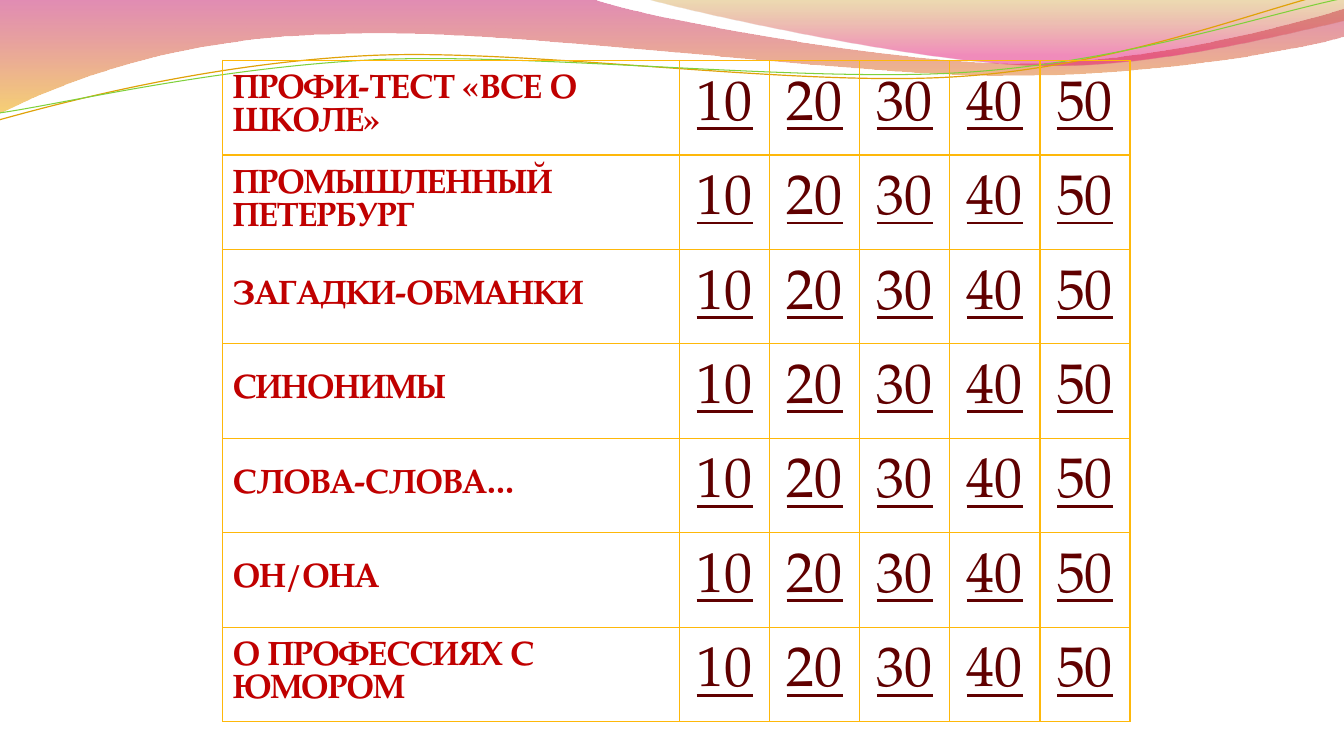
import math

from lxml import etree
from pptx import Presentation
from pptx import util as u
from pptx.dml.color import RGBColor
from pptx.enum import text
from pptx.oxml import ns

TOPICS = ["ПРОФИ-ТЕСТ «ВСЕ О ШКОЛЕ»", "ПРОМЫШЛЕННЫЙ ПЕТЕРБУРГ", "ЗАГАДКИ-ОБМАНКИ",
          "СИНОНИМЫ", "СЛОВА-СЛОВА…", "ОН/ОНА", "О ПРОФЕССИЯХ С ЮМОРОМ"]
POINTS = ["10", "20", "30", "40", "50"]

# Each wave: a start point, then line ends (2 numbers) and cubic curves (6 numbers).
LEFT_WAVE = [(0, 0), (5.87, -0.01), (6.34, 0.17, 8.85, 0.63, 10.11, 0.63),
             (11.38, 0.63, 12.78, 0.26, 13.33, 0.09), (13.35, 0.36),
             (13.11, 0.44, 11.6, 0.76, 9.94, 0.75), (8.29, 0.75, 5.09, 0.28, 3.43, 0.34),
             (1.72, 0.36, 0.61, 0.83, -0.01, 1.13), (0, 0)]
RIGHT_WAVE = [(6.39, -0.01), (6.79, 0.11, 9.09, 0.62, 10.25, 0.65),
              (11.41, 0.69, 12.82, 0.32, 13.33, 0.21), (13.33, 0), (6.39, -0.01)]
ORANGE_LINE = [(-0.01, 1.19), (0.64, 1.01, 2.11, 0.62, 3.69, 0.55),
               (5.27, 0.48, 7.9, 0.87, 9.5, 0.76), (11.1, 0.66, 12.52, 0.08, 13.31, -0.1)]
GREEN_LINE = [(0, 1.12), (0.63, 1.03, 2.18, 0.66, 3.78, 0.59),
              (5.37, 0.53, 7.96, 0.82, 9.55, 0.72), (11.15, 0.62, 12.55, 0.14, 13.34, -0.02)]


def color(hex_value):
    return RGBColor.from_string(hex_value)


def add_line_xml(parent, tag, hex_value, points):
    line = etree.SubElement(parent, ns.qn(tag), w=str(u.Pt(points)))
    fill = etree.SubElement(line, ns.qn("a:solidFill"))
    etree.SubElement(fill, ns.qn("a:srgbClr"), val=hex_value)
    return line


def place_in_box(x, y, box, rotation):
    """Give a slide point relative to the corner of a box, before the box is rotated."""
    left, top, width, height = box
    angle = math.radians(-rotation)
    across, down = x - left - width / 2, y - top - height / 2
    return (width / 2 + across * math.cos(angle) - down * math.sin(angle),
            height / 2 + across * math.sin(angle) + down * math.cos(angle))


class QuizSlide:
    """Holds the style and the slide; lengths are columns and rows of a 13.33 by 7.5 grid."""
    COLUMNS, ROWS = 13.33, 7.5
    UNIT = u.Inches(1)
    BORDER = ("FEB80A", 1)
    TOPIC = {"size": u.Pt(24), "bold": True, "color": "C00000"}
    NUMBER = {"size": u.Pt(40), "bold": False, "underline": True, "color": "600000"}

    def __init__(self, presentation):
        presentation.slide_width = self.size(self.COLUMNS)
        presentation.slide_height = self.size(self.ROWS)
        self.slide = presentation.slides.add_slide(presentation.slide_layouts[6])

    def size(self, cells):
        return u.Emu(round(cells * self.UNIT))

    def outline(self, segments, box, close, rotation=0):
        """Draw lines and cubic curves in a box of left, top, width and height."""
        builder = self.slide.shapes.build_freeform(scale=self.UNIT)
        builder.add_line_segments([(1, 1)], close=close)
        shape = builder.convert_to_shape()
        for name, value in zip(("left", "top", "width", "height"), box):
            setattr(shape, name, self.size(value))
        shape.rotation = rotation
        shape.shadow.inherit = False
        track = next(shape._element.iter(ns.qn("a:path")))
        for child in list(track):
            track.remove(child)
        track.set("w", str(shape.width))
        track.set("h", str(shape.height))
        for index, segment in enumerate(segments):
            tag = "a:moveTo" if index == 0 else "a:lnTo" if len(segment) == 2 else "a:cubicBezTo"
            step = etree.SubElement(track, ns.qn(tag))
            for x, y in zip(segment[::2], segment[1::2]):
                x, y = place_in_box(x, y, box, rotation)
                etree.SubElement(step, ns.qn("a:pt"), x=str(self.size(x)), y=str(self.size(y)))
        if close:
            etree.SubElement(track, ns.qn("a:close"))
        return shape

    def wave(self, segments, box, stops):
        """Draw a closed shape with a downward gradient of (position, colour, opacity) stops."""
        shape = self.outline(segments, box, True)
        shape.line.fill.background()
        shape.fill.gradient()
        shape.fill.gradient_angle = 270
        for stop, (position, hex_value, _) in zip(shape.fill.gradient_stops, stops):
            stop.position = position
            stop.color.rgb = color(hex_value)
        values = shape._element.spPr.iter(ns.qn("a:srgbClr"))
        for value, (_, _, opacity) in zip(values, stops):
            etree.SubElement(value, ns.qn("a:alpha"), val=str(opacity * 1000))

    def curve(self, segments, box, hex_value, points):
        shape = self.outline(segments, box, False, rotation=357.3)
        shape.fill.background()
        shape.line.color.rgb = color(hex_value)
        shape.line.width = u.Pt(points)

    def cell(self, cell, words, style, alignment):
        cell.vertical_anchor = text.MSO_ANCHOR.MIDDLE
        properties = cell._tc.get_or_add_tcPr()
        for side in ("a:lnL", "a:lnR", "a:lnT", "a:lnB"):
            add_line_xml(properties, side, *self.BORDER)
        cell.fill.background()
        paragraph = cell.text_frame.paragraphs[0]
        paragraph.alignment = alignment
        run = paragraph.add_run()
        run.text = words
        run.font.name = "TeX Gyre Pagella"
        for name, value in style.items():
            if name == "color":
                run.font.color.rgb = color(value)
            else:
                setattr(run.font, name, value)
        return run

    def board(self, left, top, width, height, topic_width):
        """Draw the table of topics and their point values."""
        number_width = (width - topic_width) / len(POINTS)
        widths = [topic_width] + [number_width] * len(POINTS)
        frame = self.slide.shapes.add_table(
            len(TOPICS), len(widths), *map(self.size, (left, top, width, height)))
        table = frame.table
        table.first_row = table.horz_banding = False
        for column, column_width in zip(table.columns, widths):
            column.width = self.size(column_width)
        for row, topic in zip(table.rows, TOPICS):
            row.height = self.size(height / len(TOPICS))
            topic_cell, *number_cells = row.cells
            run = self.cell(topic_cell, topic, self.TOPIC, text.PP_ALIGN.LEFT)
            properties = run._r.get_or_add_rPr()
            properties.insert(0, add_line_xml(properties, "a:ln", "FFC000", 0.71))
            for number_cell, number in zip(number_cells, POINTS):
                self.cell(number_cell, number, self.NUMBER, text.PP_ALIGN.CENTER)


def main():
    presentation = Presentation()
    quiz = QuizSlide(presentation)
    quiz.wave(LEFT_WAVE, (-0.01, -0.01, 13.36, 1.14), [(0, "BD0059", 45), (1, "F0AB00", 55)])
    quiz.wave(RIGHT_WAVE, (6.39, -0.01, 6.94, 0.7), [(0, "C38B00", 30), (0.8, "E1006B", 45)])
    quiz.curve(ORANGE_LINE, (-0.03, 0.22, 13.36, 0.71), "E0A209", 0.85)
    quiz.curve(GREEN_LINE, (-0.02, 0.3, 13.38, 0.58), "7FD13B", 0.75)
    quiz.board(2.21, 0.6, 9, 6.56, topic_width=4.53)
    presentation.save("out.pptx")


if __name__ == "__main__":
    main()
